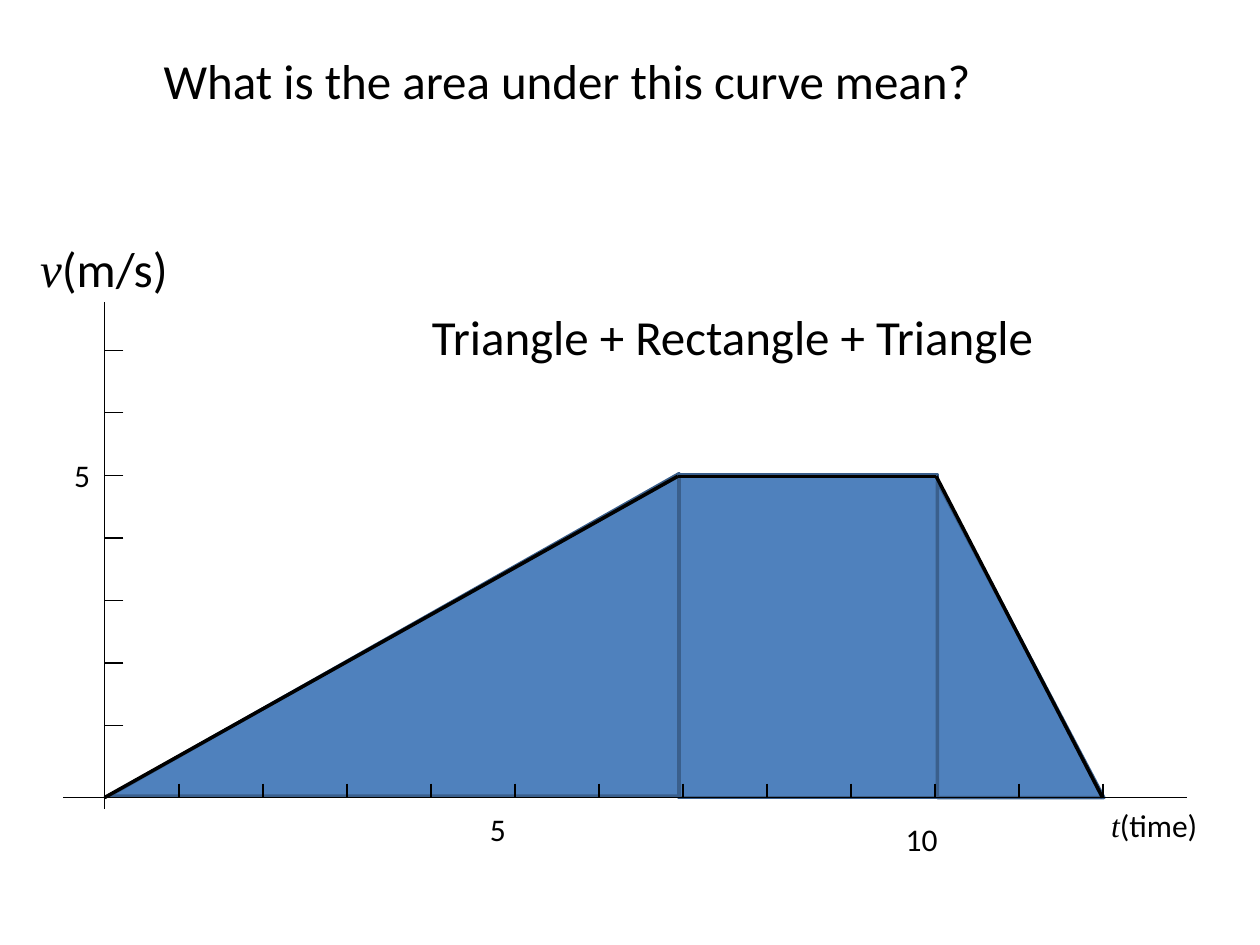
"""Build a velocity-time slide with the area under the curve split in three."""
import pptx
import pptx.dml.color
import pptx.enum.shapes
import pptx.enum.text
import pptx.oxml
import pptx.util

Inches = pptx.util.Inches
Pt = pptx.util.Pt
KIND = pptx.enum.shapes.MSO_SHAPE
TEXT = pptx.enum.text
COLORS = {"ink": "000000", "area": "4F81BD", "edge": "3A5F8C"}
SANS, SERIF = "Calibri", "Times New Roman"
ZERO, BASE, TOP = 0.83, 6.33, 3.78


def color(name):
    return pptx.dml.color.RGBColor.from_string(COLORS[name])


def area(slide, kind, box, flip=False):
    shape = slide.shapes.add_shape(kind, *map(Inches, box))
    shape.shadow.inherit = False
    shape.fill.solid()
    shape.fill.fore_color.rgb = color("area")
    shape.line.color.rgb = color("edge")
    shape.line.width = Pt(2)
    if flip:
        shape._element.spPr.xfrm.set("flipH", "1")


def line(slide, start, end, width=0.75):
    link = slide.shapes.add_connector(
        pptx.enum.shapes.MSO_CONNECTOR.STRAIGHT, *map(Inches, start + end))
    link.line.color.rgb = color("ink")
    link.line.width = Pt(width)
    props = link._element.spPr
    props.append(props.makeelement(pptx.oxml.ns.qn("a:effectLst"), {}))


def label(slide, box, size, runs, title=False):
    frame = slide.shapes.add_textbox(*map(Inches, box)).text_frame
    frame.word_wrap = title
    if title:
        frame.vertical_anchor = TEXT.MSO_ANCHOR.MIDDLE
        frame.paragraphs[0].alignment = TEXT.PP_ALIGN.CENTER
    else:
        frame.auto_size = TEXT.MSO_AUTO_SIZE.SHAPE_TO_FIT_TEXT
    for text, face in runs:
        run = frame.paragraphs[0].add_run()
        run.text = text
        run.font.name = face
        run.font.size = Pt(size)
        run.font.italic = face == SERIF
        run.font.color.rgb = color("ink")


def axes(slide):
    line(slide, (ZERO, 2.4), (ZERO, 6.42))
    line(slide, (9.42, BASE), (0.5, BASE))
    for step in range(7):
        y = 2.78 + step * (5.76 - 2.78) / 6
        line(slide, (0.98, y), (ZERO, y))
    for step in range(12):
        x = 1.42 + step * 2 / 3
        line(slide, (x, 6.22), (x, BASE))


def main():
    deck = pptx.Presentation()
    deck.slide_width, deck.slide_height = Inches(10), Inches(7.5)
    slide = deck.slides.add_slide(deck.slide_layouts[6])

    area(slide, KIND.RIGHT_TRIANGLE, (0.86, 3.76, 4.53, 2.56), flip=True)
    area(slide, KIND.RECTANGLE, (5.39, 3.77, 2.05, 2.56))
    area(slide, KIND.RIGHT_TRIANGLE, (7.44, 3.82, 1.32, 2.51))

    label(slide, (0, 0.01, 9, 1.25), 28,
          [("What is the area under this curve mean?", SANS)], title=True)

    curve = [(ZERO, BASE), (5.38, TOP), (7.43, TOP), (8.75, BASE)]
    for start, end in zip(curve, curve[1:]):
        line(slide, start, end, 2)
    axes(slide)

    label(slide, (8.72, 6.35, 0.91, 0.4), 18, [("t", SERIF), ("(time)", SANS)])
    label(slide, (3.79, 6.38, 0.33, 0.4), 18, [("5", SANS)])
    label(slide, (7.09, 6.46, 0.46, 0.4), 18, [("10", SANS)])
    label(slide, (0.22, 1.84, 1.23, 0.57), 28, [("v", SERIF), ("(m/s)", SANS)])
    label(slide, (0.49, 3.57, 0.33, 0.4), 18, [("5", SANS)])
    label(slide, (3.33, 2.38, 5.02, 0.57), 28,
          [("Triangle + Rectangle + Triangle", SANS)])
    deck.save("out.pptx")


if __name__ == "__main__":
    main()
